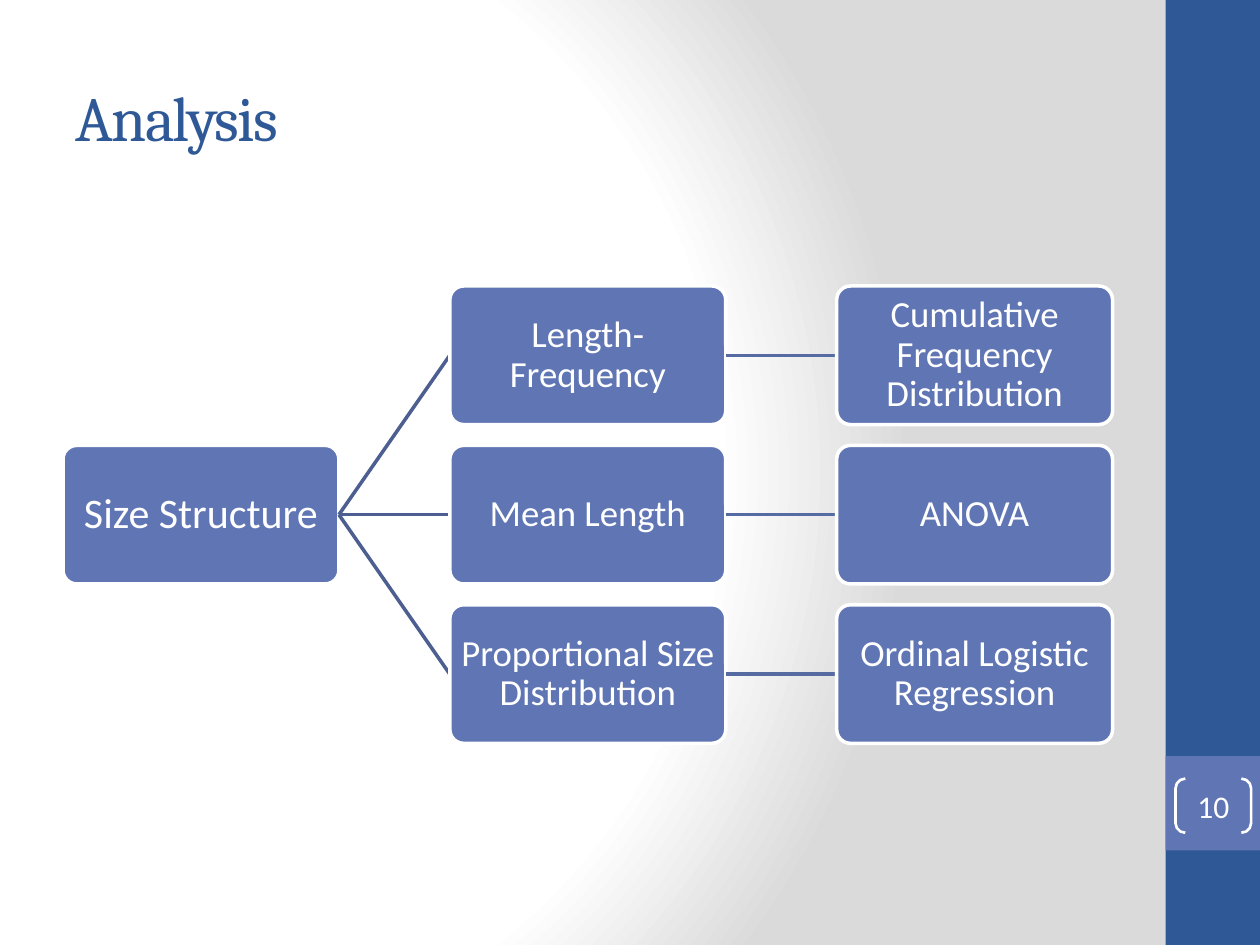
"""Build the Analysis slide: a size-structure tree leading to its statistical tests."""
from pptx import Presentation
from pptx.dml.color import RGBColor
from pptx.enum.shapes import MSO_CONNECTOR as LINK, MSO_SHAPE as SHAPE
from pptx.enum.text import MSO_ANCHOR as ANCHOR, PP_ALIGN as ALIGN
from pptx.oxml import parse_xml
from pptx.oxml.ns import nsdecls
from pptx.util import Inches, Pt

TITLE = "Analysis"
PAGE_NUMBER = "10"
ROOT = "Size Structure"
BRANCHES = [
    ("Length-Frequency", "Cumulative Frequency Distribution"),
    ("Mean Length", "ANOVA"),
    ("Proportional Size Distribution", "Ordinal Logistic Regression"),
]
NAVY, BLUE, WHITE = "2F5897", "6076B4", "FFFFFF"
BRANCH_LINE, TEST_LINE = "4D5E90", "576BA3"
STOPS = [(0, WHITE), (75, WHITE), (100, "DADADA")]
LEFT, TOP, WIDTH, HEIGHT = 0.5, 2.27, 2.19, 1.1
COLUMN_STEP, ROW_STEP = 3.07, 1.265


def color(value):
    return RGBColor.from_string(value)


def paint_background(page):
    page.background.fill.gradient()
    gradient = page.element.xpath("./p:cSld/p:bg/p:bgPr/a:gradFill")[0]
    stops = "".join(
        f'<a:gs pos="{position * 1000}"><a:srgbClr val="{value}"/></a:gs>'
        for position, value in STOPS
    )
    gradient.getparent().replace(gradient, parse_xml(
        f'<a:gradFill {nsdecls("a")} rotWithShape="1"><a:gsLst>{stops}</a:gsLst>'
        '<a:path path="circle"><a:fillToRect l="20000" t="50000" r="100000" b="50000"/>'
        "</a:path></a:gradFill>"
    ))


def write(box, text, size, tint=WHITE, font="Calibri", align=ALIGN.CENTER, inset=None):
    frame = box.text_frame
    frame.word_wrap = True
    frame.vertical_anchor = ANCHOR.MIDDLE
    if inset is not None:
        for side in ("left", "top", "right", "bottom"):
            setattr(frame, f"margin_{side}", Inches(inset))
    para = frame.paragraphs[0]
    para.alignment = align
    span = para.add_run()
    span.text = text
    for name, value in {"size": Pt(size), "name": font, "bold": False}.items():
        setattr(span.font, name, value)
    span.font.color.rgb = color(tint)
    return para


def add_box(page, kind, place, fill=None, line=None, weight=2):
    box = page.shapes.add_shape(kind, *map(Inches, place))
    box.shadow.inherit = False
    if fill:
        box.fill.solid()
        box.fill.fore_color.rgb = color(fill)
    else:
        box.fill.background()
    if line:
        box.line.color.rgb = color(line)
        box.line.width = Pt(weight)
    else:
        box.line.fill.background()
    return box


def add_node(page, text, column, row, size=21, inset=0.01):
    place = (LEFT + column * COLUMN_STEP, TOP + row * ROW_STEP, WIDTH, HEIGHT)
    node = add_box(page, SHAPE.ROUNDED_RECTANGLE, place, BLUE, WHITE)
    node.adjustments[0] = 0.1
    write(node, text, size, inset=inset).line_spacing = 0.9
    return node


def add_child(page, parent, text, column, row, tint):
    link = page.shapes.add_connector(LINK.STRAIGHT, 0, 0, 0, 0)
    link.line.color.rgb = color(tint)
    link.line.width = Pt(2)
    link.element.spPr.append(parse_xml(f'<a:effectLst {nsdecls("a")}/>'))
    child = add_node(page, text, column, row)
    link.begin_connect(parent, 3)
    link.end_connect(child, 1)
    return child


def main():
    deck = Presentation()
    deck.slide_width, deck.slide_height = Inches(10), Inches(7.5)
    page = deck.slides.add_slide(deck.slide_layouts[5])
    paint_background(page)

    title = page.shapes.title
    places = {"left": 0.5, "top": 0.3, "width": 8.33, "height": 1.25}
    for name, value in places.items():
        setattr(title, name, Inches(value))
    para = write(title, TITLE, 36, NAVY, "Cambria", ALIGN.LEFT)
    para.runs[0].font._element.set("spc", "-100")

    add_box(page, SHAPE.RECTANGLE, (9.25, 0, 0.75, 7.5), NAVY)
    add_box(page, SHAPE.RECTANGLE, (9.25, 6, 0.75, 0.75), BLUE)
    bracket = add_box(page, SHAPE.DOUBLE_BRACKET, (9.33, 6.18, 0.6, 0.43), None, WHITE, 1.5)
    bracket.adjustments[0] = 0.18
    write(bracket, PAGE_NUMBER, 18, inset=0)

    root = add_node(page, ROOT, 0, (len(BRANCHES) - 1) / 2, 24, 0.02)
    for row, (measure, test) in enumerate(BRANCHES):
        branch = add_child(page, root, measure, 1, row, BRANCH_LINE)
        add_child(page, branch, test, 2, row, TEST_LINE)
    deck.save("out.pptx")


if __name__ == "__main__":
    main()
